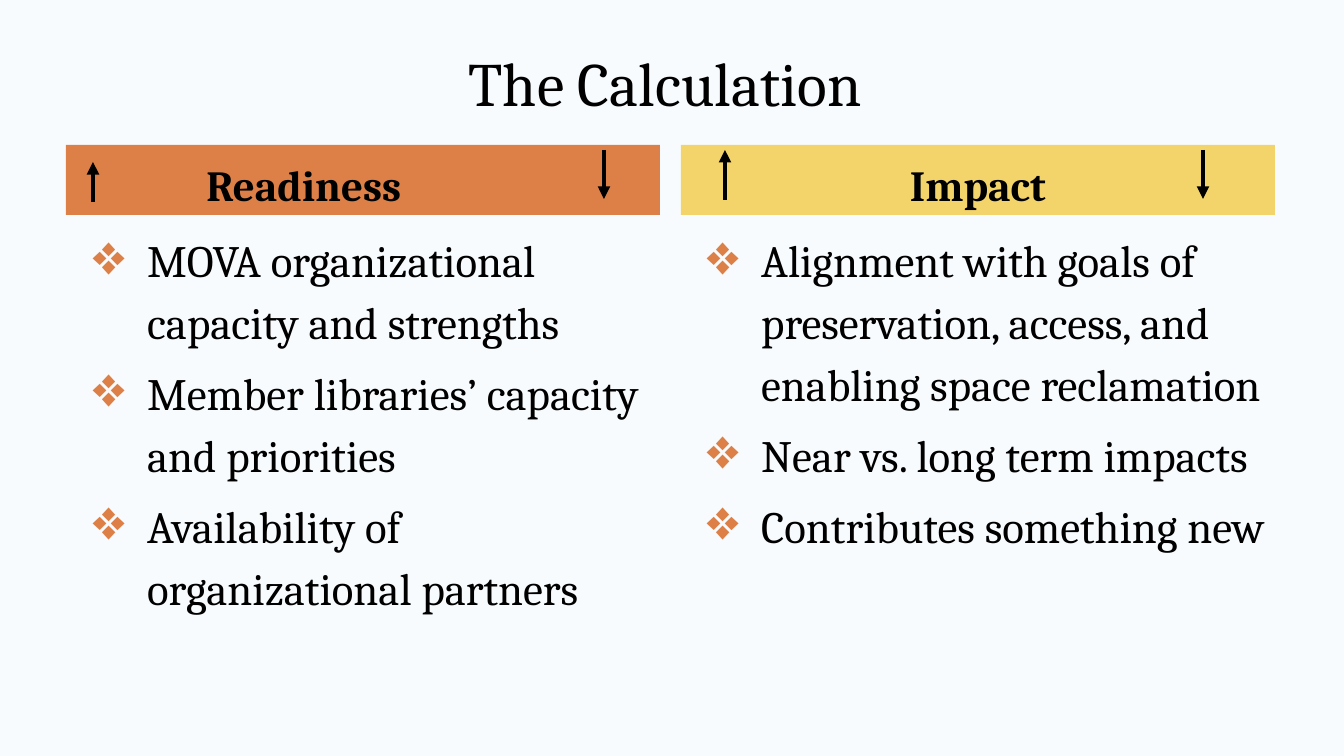
from dataclasses import dataclass

import lxml.etree
import pptx
import pptx.dml.color
import pptx.enum.shapes
import pptx.enum.text
import pptx.oxml.ns
import pptx.util

WIDTH, HEIGHT = 1344, 756
SCALE = 9144000 / WIDTH  # EMU per px

BACKGROUND = pptx.dml.color.RGBColor(0xF8, 0xFB, 0xFD)
ORANGE = pptx.dml.color.RGBColor(0xDD, 0x80, 0x47)
YELLOW = pptx.dml.color.RGBColor(0xF3, 0xD4, 0x6A)
BLACK = pptx.dml.color.RGBColor(0, 0, 0)

FONT = "Cambria"
CENTER = pptx.enum.text.PP_ALIGN.CENTER
MIDDLE = pptx.enum.text.MSO_ANCHOR.MIDDLE
TOP = pptx.enum.text.MSO_ANCHOR.TOP
HEADER_TOP, HEADER_WIDTH, HEADER_HEIGHT = 145, 594, 70
BODY_TOP, BODY_HEIGHT = 218, 460
INSET, INDENT, HANGING = 13, 67, 56


@dataclass(frozen=True)
class Column:
    heading: str
    heading_indented: bool
    fill: pptx.dml.color.RGBColor
    header_left: int
    body_left: int
    body_width: int
    points: tuple[str, ...]


@dataclass(frozen=True)
class Arrow:
    x: int
    start: int
    end: int


COLUMNS = (
    Column("Readiness\t", True, ORANGE, 66, 67, 614, (
        "MOVA organizational capacity and strengths",
        "Member libraries’ capacity and priorities",
        "Availability of organizational partners",
    )),
    Column("Impact", False, YELLOW, 681, 681, 649, (
        "Alignment with goals of preservation, access, and enabling space reclamation",
        "Near vs. long term impacts",
        "Contributes something new",
    )),
)
ARROWS = (Arrow(93, 202, 162), Arrow(604, 150, 199),
          Arrow(725, 200, 150), Arrow(1203, 150, 199))


def px(length: int) -> pptx.util.Emu:
    return pptx.util.Emu(round(length * SCALE))


def add_child(parent, tag: str, **attributes: str):
    return lxml.etree.SubElement(parent, pptx.oxml.ns.qn(tag), **attributes)


def write(box, *lines: str, size: int, bold: bool = False, align=None, anchor=TOP,
          spaced: bool = True, indented: bool = False, bullet: str = "") -> None:
    frame = box.text_frame
    frame.word_wrap = True
    frame.vertical_anchor = anchor
    for index, line in enumerate(lines):
        para = frame.add_paragraph() if index else frame.paragraphs[0]
        para.alignment = align
        if spaced:
            para.line_spacing = 1.15
            para.space_before = pptx.util.Pt(5)
        properties = para._p.get_or_add_pPr()
        if indented:
            properties.set("marL", str(px(INDENT)))
            properties.set("indent", str(-px(HANGING)))
        if bullet:
            color = add_child(properties, "a:buClr")
            add_child(color, "a:srgbClr", val=str(ORANGE))
            add_child(properties, "a:buFont", typeface=FONT)
            add_child(properties, "a:buChar", char=bullet)
        span = para.add_run()
        span.text = line
        span.font.name = FONT
        span.font.size = pptx.util.Pt(size)
        span.font.bold = bold
        span.font.color.rgb = BLACK


def draw_column(page, column: Column) -> None:
    header = page.shapes.add_shape(
        pptx.enum.shapes.MSO_SHAPE.RECTANGLE, px(column.header_left), px(HEADER_TOP),
        px(HEADER_WIDTH), px(HEADER_HEIGHT))
    header.shadow.inherit = False
    header.fill.solid()
    header.fill.fore_color.rgb = column.fill
    header.line.fill.background()
    write(header, column.heading, size=23, bold=True, align=CENTER, anchor=MIDDLE,
          indented=column.heading_indented)
    if column.heading_indented:
        header.text_frame.margin_right = px(INSET + INDENT)

    body = page.shapes.add_textbox(px(column.body_left), px(BODY_TOP),
                                   px(column.body_width), px(BODY_HEIGHT))
    write(body, *column.points, size=24, indented=True, bullet="❖")


def draw_arrow(page, arrow: Arrow) -> None:
    line = page.shapes.add_connector(
        pptx.enum.shapes.MSO_CONNECTOR.STRAIGHT,
        px(arrow.x), px(arrow.start), px(arrow.x), px(arrow.end))
    line.line.color.rgb = BLACK
    line.line.width = pptx.util.Pt(2.25)
    add_child(line.line._get_or_add_ln(), "a:tailEnd", type="triangle")
    add_child(line._element.spPr, "a:effectLst")


def main() -> None:
    deck = pptx.Presentation()
    deck.slide_width, deck.slide_height = px(WIDTH), px(HEIGHT)
    page = deck.slides.add_slide(deck.slide_layouts[6])
    page.background.fill.solid()
    page.background.fill.fore_color.rgb = BACKGROUND

    # Headed columns
    for column in COLUMNS:
        draw_column(page, column)

    # Title
    title = page.shapes.add_textbox(px(67), px(19), px(1210), px(126))
    write(title, "The Calculation ", size=33, align=CENTER, anchor=MIDDLE, spaced=False)

    # Up and down arrows on the headers
    for arrow in ARROWS:
        draw_arrow(page, arrow)

    deck.save("out.pptx")


if __name__ == "__main__":
    main()
